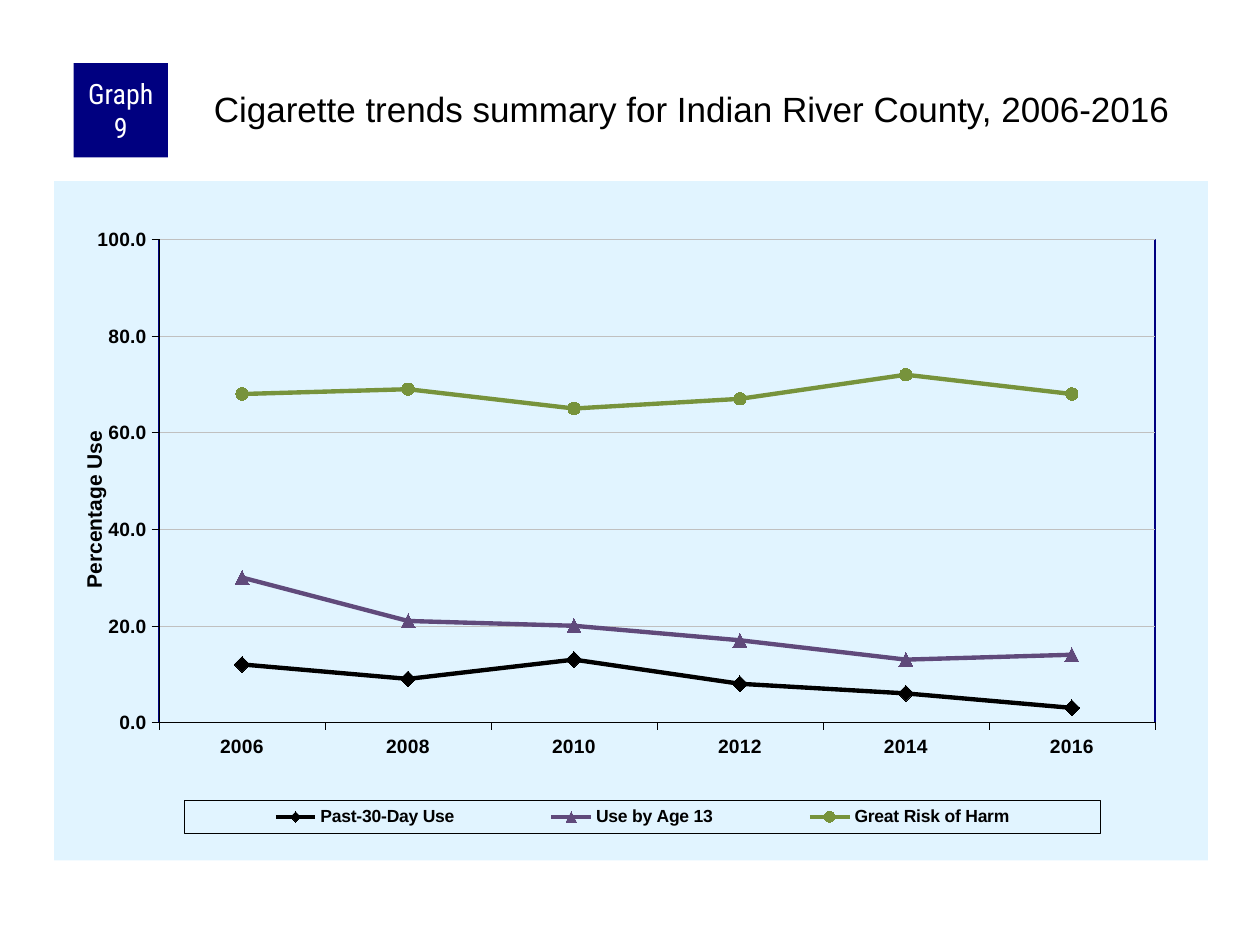
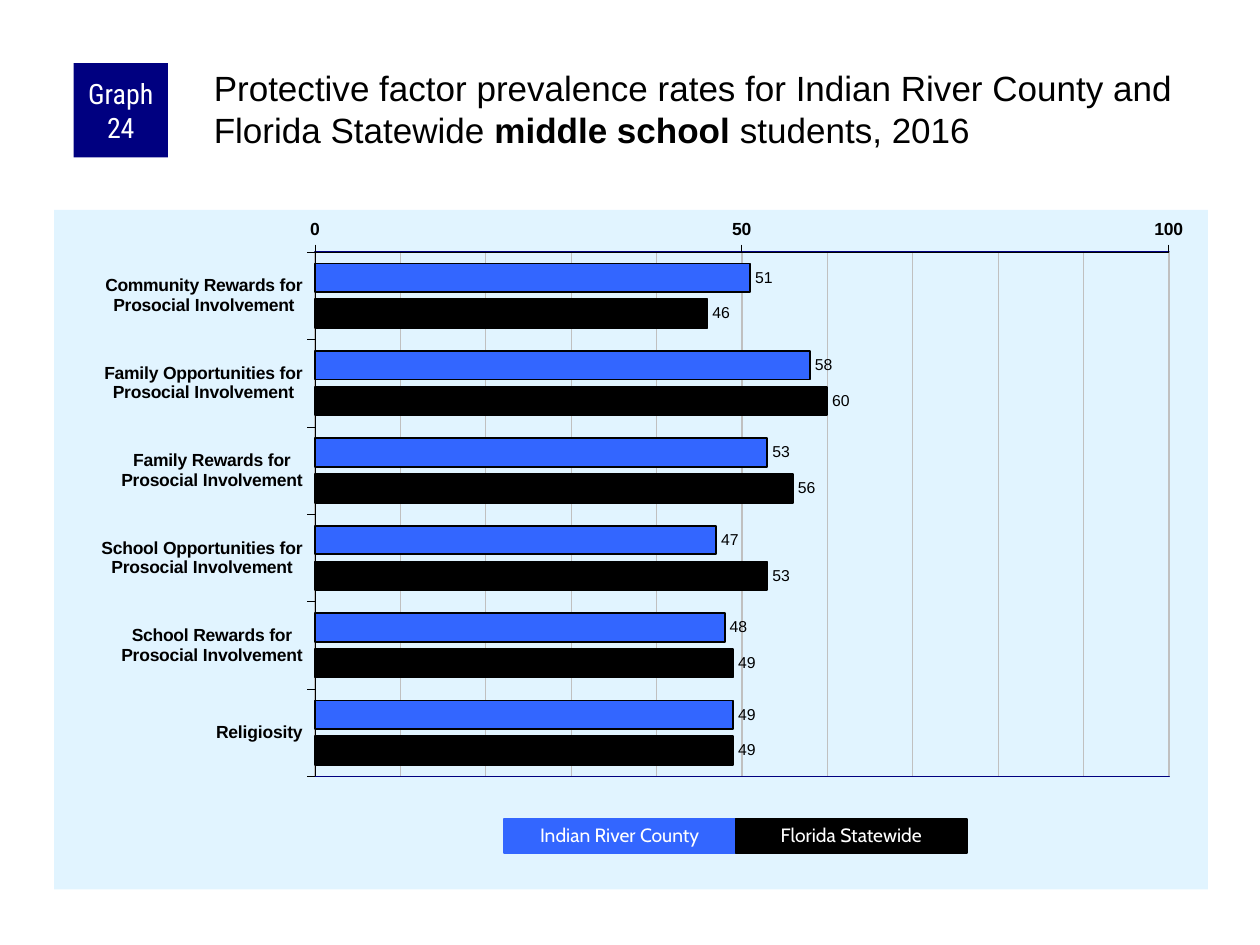
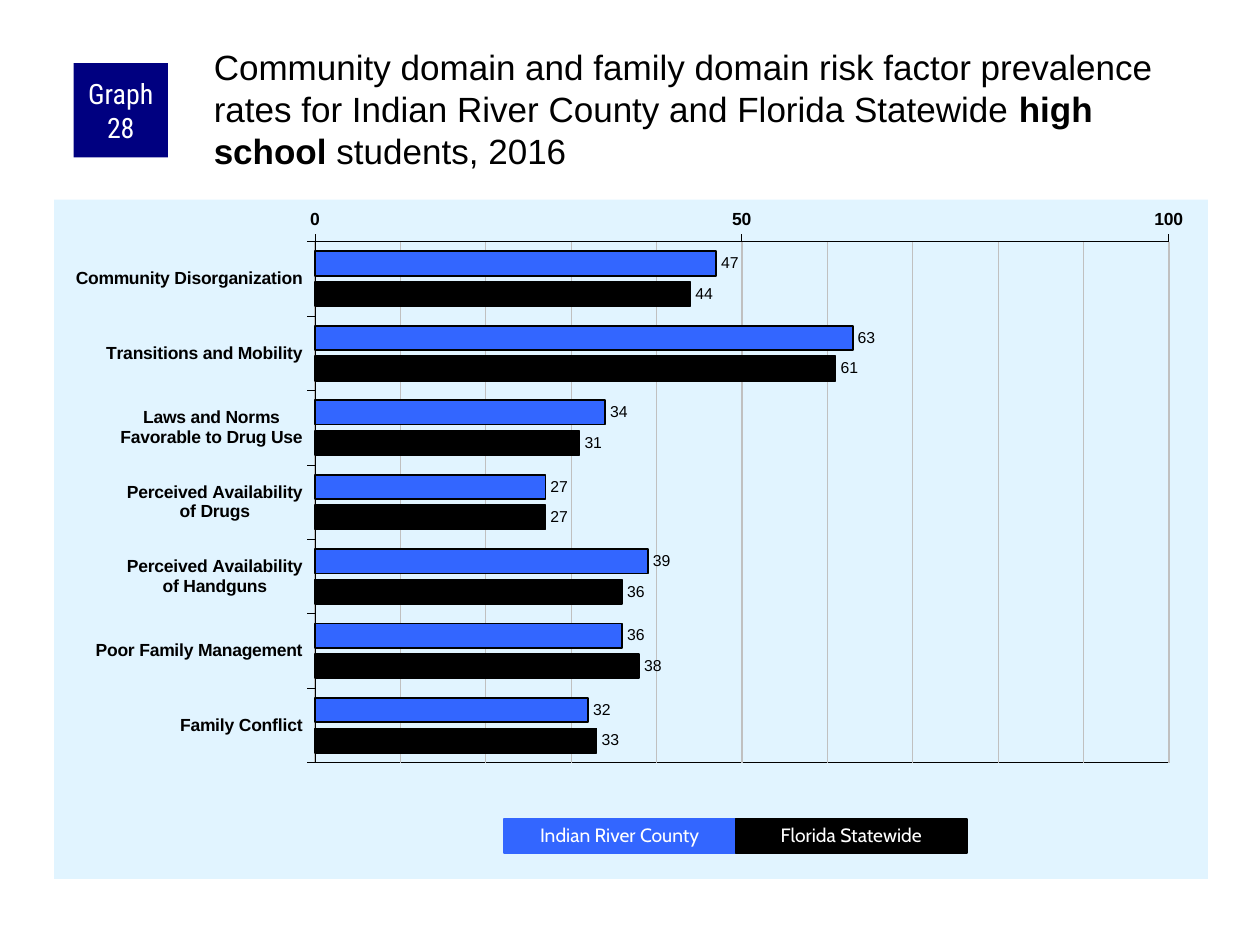
import dataclasses

import lxml.etree
import pptx
import pptx.chart.data
import pptx.dml.color
import pptx.enum.chart
import pptx.enum.shapes
import pptx.enum.text
import pptx.oxml.ns
import pptx.util

RGBColor = pptx.dml.color.RGBColor
Pt = pptx.util.Pt
Inches = pptx.util.Inches
qn = pptx.oxml.ns.qn

NAVY = RGBColor(0x00, 0x00, 0x80)
BLACK = RGBColor(0x00, 0x00, 0x00)
WHITE = RGBColor(0xFF, 0xFF, 0xFF)
PANEL = RGBColor(0xE1, 0xF4, 0xFF)
GRID_GREY = RGBColor(0xC0, 0xC0, 0xC0)
BLUE = RGBColor(0x33, 0x66, 0xFF)
PURPLE = RGBColor(0x60, 0x4A, 0x7B)
GREEN = RGBColor(0x77, 0x93, 0x3C)

BODY_FONT, BADGE_FONT, KEY_FONT = "Arial", "Roboto Condensed", "Cabin"
COLUMNS, ROWS = 120, 90
TITLE_ONLY = 5
REGIONS = [("Indian River County", BLUE), ("Florida Statewide", BLACK)]
MARKERS = pptx.enum.chart.XL_MARKER_STYLE
TICKS = pptx.enum.chart.XL_TICK_MARK


@dataclasses.dataclass
class Box:
    """An area in columns and rows of the slide grid."""
    column: float
    row: float
    columns: float
    rows: float

    def frame(self):
        across, down = Inches(10) / COLUMNS, Inches(7.5) / ROWS
        return [round(n) for n in (self.column * across, self.row * down,
                                   self.columns * across, self.rows * down)]

    def split(self, count):
        width = self.columns / count
        return [Box(self.column + i * width, self.row, width, self.rows)
                for i in range(count)]


BADGE_BOX = Box(7, 6, 9, 9)
KEY_BOX = Box(48, 78, 44.1, 3.25)


def title_box(row):
    return Box(20, row, 95, 10)


def panel_box(row):
    return Box(5.15, row, 109.9, 64.7)


# Shared formatting

def assign(target, formats):
    for name, value in formats.items():
        setattr(target, name, value)


def set_font(font, size, color=BLACK, bold=False, name=BODY_FONT):
    assign(font, {"size": Pt(size), "bold": bold, "name": name})
    font.color.rgb = color


def set_line(line, color, width):
    line.color.rgb = color
    line.width = Pt(width)


def shape_properties(fill=None, line=None, width=0.25):
    """Build c:spPr for chart parts that have no public format object."""
    properties = lxml.etree.Element(qn("c:spPr"))

    def paint(parent, color):
        if color is None:
            lxml.etree.SubElement(parent, qn("a:noFill"))
        else:
            solid = lxml.etree.SubElement(parent, qn("a:solidFill"))
            lxml.etree.SubElement(solid, qn("a:srgbClr"), val=str(color))

    paint(properties, fill)
    outline = lxml.etree.SubElement(properties, qn("a:ln"), w=str(Pt(width)))
    paint(outline, line)
    return properties


def set_layout(part, index, inner=False, **shares):
    """Place a chart part by shares of the chart's size."""
    for old in part.findall(qn("c:layout")):
        part.remove(old)
    layout = lxml.etree.Element(qn("c:layout"))
    manual = lxml.etree.SubElement(layout, qn("c:manualLayout"))
    if inner:
        lxml.etree.SubElement(manual, qn("c:layoutTarget"), val="inner")
    for name in ("xMode", "yMode"):
        lxml.etree.SubElement(manual, qn("c:" + name), val="edge")
    for name, share in shares.items():
        lxml.etree.SubElement(manual, qn("c:" + name), val=str(share))
    part.insert(index, layout)


# Text parts

def add_label(page, box, text, fill, font, size):
    label = page.shapes.add_shape(
        pptx.enum.shapes.MSO_SHAPE.RECTANGLE, *box.frame())
    label.shadow.inherit = False
    label.fill.solid()
    label.fill.fore_color.rgb = fill
    label.line.fill.background()
    label.text_frame.word_wrap = True
    para = label.text_frame.paragraphs[0]
    para.alignment = pptx.enum.text.PP_ALIGN.CENTER
    span = para.add_run()
    span.text = text
    set_font(span.font, size, WHITE, name=font)
    return label


def add_heading(page, number, box, spans):
    badge = add_label(page, BADGE_BOX, f"Graph {number}", NAVY, BADGE_FONT, 16)
    assign(badge.text_frame, {
        "margin_left": Inches(0.05), "margin_right": Inches(0.05),
        "margin_top": 0, "margin_bottom": 0})

    title = page.shapes.title
    assign(title, dict(zip(("left", "top", "width", "height"), box.frame())))
    assign(title.text_frame, {
        "margin_left": Inches(0.03), "margin_top": Inches(0.03),
        "margin_right": 0, "margin_bottom": 0, "word_wrap": True,
        "auto_size": pptx.enum.text.MSO_AUTO_SIZE.NONE,
        "vertical_anchor": pptx.enum.text.MSO_ANCHOR.TOP})
    para = title.text_frame.paragraphs[0]
    para.alignment = pptx.enum.text.PP_ALIGN.LEFT
    for text, bold in spans:
        span = para.add_run()
        span.text = text
        set_font(span.font, 20, bold=bold)


def add_region_key(page, box):
    for (region, color), cell in zip(REGIONS, box.split(len(REGIONS))):
        swatch = add_label(page, cell, region, color, KEY_FONT, 11)
        set_line(swatch.line, color, 0.75)
        swatch.text_frame.auto_size = (
            pptx.enum.text.MSO_AUTO_SIZE.SHAPE_TO_FIT_TEXT)
        swatch.text_frame.paragraphs[0].line_spacing = 0.9


# Charts

def add_panel_chart(page, box, kind, categories, series, size, plot, border):
    data = pptx.chart.data.CategoryChartData()
    data.categories = categories
    for name, values in series:
        data.add_series(name, values)
    chart = page.shapes.add_chart(kind, *box.frame(), data).chart
    chart.has_title = False
    chart.has_legend = False
    set_font(chart.font, size)
    chart.plots[0].vary_by_categories = False
    chart.element.find(qn("c:chart")).addnext(shape_properties(PANEL))
    area = chart.element.find(".//" + qn("c:plotArea"))
    set_layout(area, 0, inner=True, **plot)
    area.append(shape_properties(line=border[0], width=border[1]))
    return chart


def style_axes(chart, size, major, number_format, grid_width):
    for axis in (chart.category_axis, chart.value_axis):
        assign(axis, {"major_tick_mark": TICKS.OUTSIDE,
                      "minor_tick_mark": TICKS.NONE})
        set_font(axis.tick_labels.font, size, bold=True)
        set_line(axis.format.line, BLACK, 0.25)
    axis = chart.value_axis
    assign(axis, {"minimum_scale": 0, "maximum_scale": 100,
                  "major_unit": major, "has_major_gridlines": True})
    assign(axis.tick_labels, {"number_format": number_format,
                              "number_format_is_linked": False})
    set_line(axis.major_gridlines.format.line, GRID_GREY, grid_width)


def add_trend_chart(page, box, years, trends):
    chart = add_panel_chart(
        page, box, pptx.enum.chart.XL_CHART_TYPE.LINE_MARKERS, years,
        [(name, values) for name, values, *_ in trends], 8,
        {"x": 0.091, "y": 0.086, "w": 0.863, "h": 0.711}, (NAVY, 1))
    style_axes(chart, 11, 20, "0.0", 0.25)
    for line, (_, _, color, marker, size) in zip(chart.plots[0].series, trends):
        line.smooth = False
        set_line(line.format.line, color, 2.5)
        assign(line.marker, {"style": marker, "size": size})
        line.marker.format.fill.solid()
        line.marker.format.fill.fore_color.rgb = color
        line.marker.format.line.color.rgb = color

    # Axis title
    axis_title = chart.value_axis.axis_title
    span = axis_title.text_frame.paragraphs[0].add_run()
    span.text = "Percentage Use"
    set_font(span.font, 12, bold=True)
    set_layout(chart.element.find(".//" + qn("c:valAx") + "/" + qn("c:title")),
               1, x=0.02, y=0.362)

    # Boxed legend under the plot
    chart.has_legend = True
    assign(chart.legend, {
        "position": pptx.enum.chart.XL_LEGEND_POSITION.BOTTOM,
        "include_in_layout": False})
    set_font(chart.legend.font, 10, bold=True)
    legend = chart.element.find(".//" + qn("c:legend"))
    set_layout(legend, 1, x=0.113, y=0.912, w=0.794, h=0.048)
    legend.find(qn("c:txPr")).addprevious(shape_properties(line=BLACK))


def add_rate_chart(page, box, rates, plot_height, border):
    names, county, state = zip(*rates)
    chart = add_panel_chart(
        page, box, pptx.enum.chart.XL_CHART_TYPE.BAR_CLUSTERED, names,
        [("Series 1", county), ("Series 2", state)], 11.8,
        {"x": 0.226, "y": 0.062, "w": 0.74, "h": plot_height}, border)
    style_axes(chart, 10, 50, "0", 1)
    assign(chart.category_axis, {
        "reverse_order": True, "crosses": pptx.enum.chart.XL_AXIS_CROSSES.MAXIMUM})
    assign(chart.value_axis, {"minor_unit": 10, "has_minor_gridlines": True})
    minor_grid = chart.element.find(".//" + qn("c:minorGridlines"))
    minor_grid.append(shape_properties(line=GRID_GREY))

    assign(chart.plots[0], {"gap_width": 80, "overlap": -25})
    for bars, (_, color) in zip(chart.plots[0].series, REGIONS):
        bars.format.fill.solid()
        bars.format.fill.fore_color.rgb = color
        set_line(bars.format.line, BLACK, 1)
        assign(bars.data_labels, {
            "show_value": True,
            "position": pptx.enum.chart.XL_LABEL_POSITION.OUTSIDE_END})
        set_font(bars.data_labels.font, 9)


# Slide types

def add_page(deck):
    return deck.slides.add_slide(deck.slide_layouts[TITLE_ONLY])


def add_trend_page(deck, number, title, title_row, panel_row, years, trends):
    page = add_page(deck)
    add_heading(page, number, title_box(title_row), title)
    add_trend_chart(page, panel_box(panel_row), years, trends)


def add_rate_page(deck, number, title, title_row, panel_row, rates,
                  plot_height, border):
    page = add_page(deck)
    add_rate_chart(page, panel_box(panel_row), rates, plot_height, border)
    add_heading(page, number, title_box(title_row), title)
    add_region_key(page, KEY_BOX)


# Content

YEARS = [str(year) for year in range(2006, 2017, 2)]
CIGARETTE_TRENDS = [
    ("Past-30-Day Use", (12, 9, 13, 8, 6, 3), BLACK, MARKERS.DIAMOND, 9),
    ("Use by Age 13", (30, 21, 20, 17, 13, 14), PURPLE, MARKERS.TRIANGLE, 8),
    ("Great Risk of Harm", (68, 69, 65, 67, 72, 68), GREEN, MARKERS.CIRCLE, 7),
]
PROTECTIVE_RATES = [
    ("Community Rewards for\nProsocial Involvement", 51, 46),
    ("Family Opportunities for\nProsocial Involvement", 58, 60),
    ("Family Rewards for\nProsocial Involvement", 53, 56),
    ("School Opportunities for\nProsocial Involvement", 47, 53),
    ("School Rewards for\nProsocial Involvement", 48, 49),
    ("Religiosity", 49, 49),
]
RISK_RATES = [
    ("Community Disorganization", 47, 44),
    ("Transitions and Mobility", 63, 61),
    ("Laws and Norms\nFavorable to Drug Use", 34, 31),
    ("Perceived Availability\nof Drugs", 27, 27),
    ("Perceived Availability\nof Handguns", 39, 36),
    ("Poor Family Management", 36, 38),
    ("Family Conflict", 32, 33),
]


def main():
    deck = pptx.Presentation()
    assign(deck, {"slide_width": Inches(10), "slide_height": Inches(7.5)})
    add_trend_page(
        deck, 9,
        [("Cigarette trends summary for Indian River County, 2006-2016", False)],
        8, 17.25, YEARS, CIGARETTE_TRENDS)
    add_rate_page(
        deck, 24,
        [("Protective factor prevalence rates for Indian River County and "
          "Florida Statewide ", False),
         ("middle school ", True), ("students, 2016", False)],
        6, 20, PROTECTIVE_RATES, 0.772, (NAVY, 1))
    add_rate_page(
        deck, 28,
        [("Community domain and family domain risk factor prevalence rates for "
          "Indian River County and Florida Statewide ", False),
         ("high school", True), (" students, 2016", False)],
        4, 19, RISK_RATES, 0.767, (BLACK, 0.25))
    deck.save("out.pptx")


if __name__ == "__main__":
    main()
